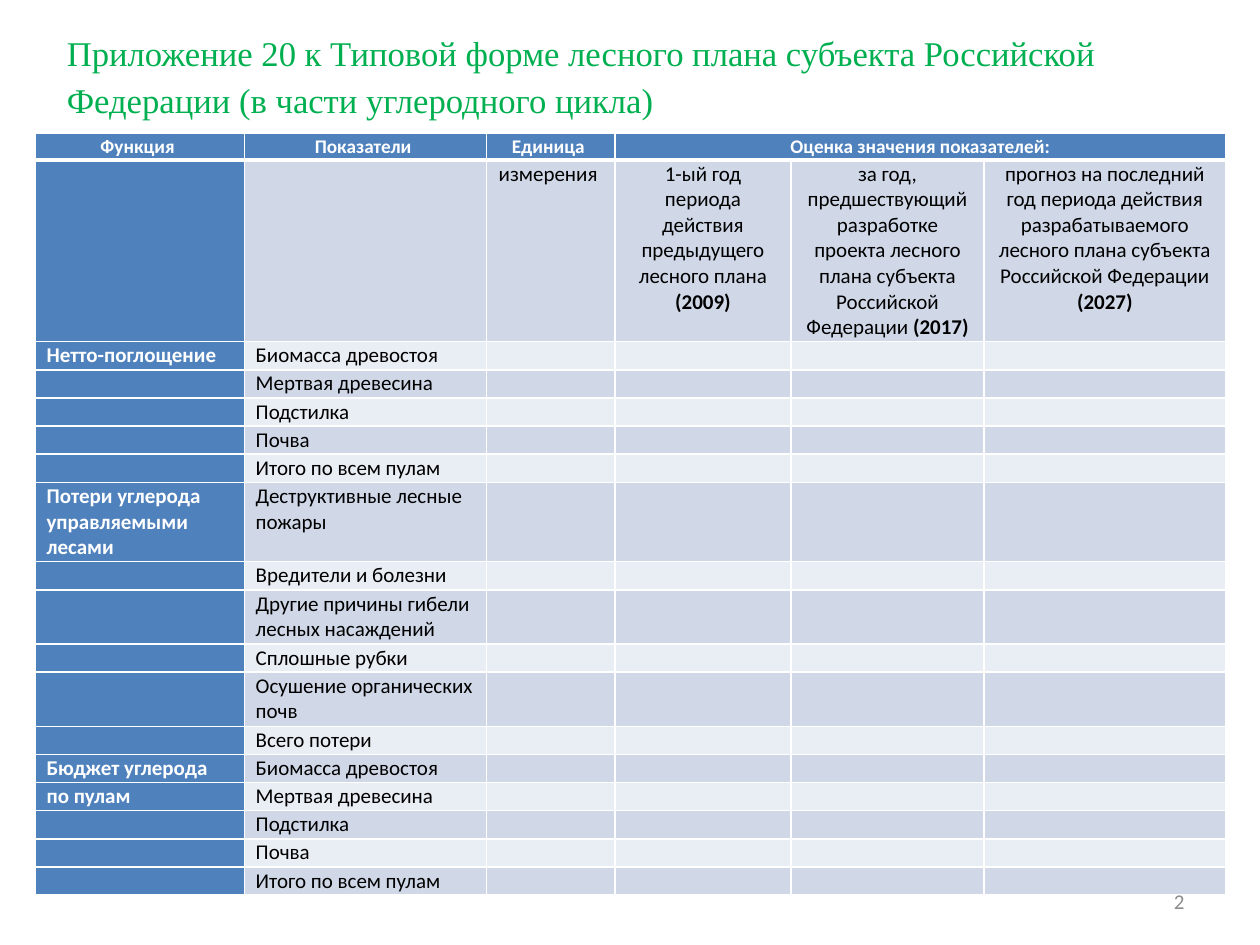
import dataclasses

import pptx
import pptx.dml.color
import pptx.enum.text
import pptx.oxml.ns
import pptx.util
from lxml import etree

ALIGN = pptx.enum.text.PP_ALIGN
MIDDLE = pptx.enum.text.MSO_ANCHOR.MIDDLE
qn = pptx.oxml.ns.qn


@dataclasses.dataclass(frozen=True)
class Theme:
    title: str = "00B050"
    accent: str = "4F81BD"
    bands: tuple = ("E9EDF4", "D0D8E8")
    light: str = "FFFFFF"
    dark: str = "000000"
    muted: str = "8C8C8C"
    title_font: str = "Times New Roman"
    body_font: str = "Calibri"
    title_size: float = 19.8
    head_size: float = 11
    body_size: float = 12


def rgb(value):
    return pptx.dml.color.RGBColor.from_string(value)


def write(p, text, font, size, color, bold=False, align=None):
    r = p.add_run()
    r.text = text
    r.font.name = font
    r.font.size = pptx.util.Pt(size)
    r.font.color.rgb = rgb(color)
    r.font.bold = bold
    if align is not None:
        p.alignment = align


class Deck:
    COLUMNS, ROWS = 100, 75

    def __init__(self, theme):
        self.theme = theme
        self.prs = pptx.Presentation()
        self.prs.slide_width = pptx.util.Inches(10)
        self.prs.slide_height = pptx.util.Inches(7.5)
        self.s = self.prs.slides.add_slide(self.prs.slide_layouts[5])

    def x(self, columns):
        return round(self.prs.slide_width * columns / self.COLUMNS)

    def y(self, rows):
        return round(self.prs.slide_height * rows / self.ROWS)

    def box(self, left, top, width, height):
        return self.x(left), self.y(top), self.x(width), self.y(height)

    def title(self, text, *place):
        sp = self.s.shapes.title
        sp.left, sp.top, sp.width, sp.height = self.box(*place)
        tf = sp.text_frame
        tf.word_wrap = True
        tf.auto_size = pptx.enum.text.MSO_AUTO_SIZE.NONE
        tf.vertical_anchor = MIDDLE
        tf.margin_top, tf.margin_bottom = 0, self.y(2.1)
        p = tf.paragraphs[0]
        p.line_spacing = 1.15
        write(p, text, self.theme.title_font, self.theme.title_size, self.theme.title, align=ALIGN.LEFT)

    def page_number(self, text, *place):
        tf = self.s.shapes.add_textbox(*self.box(*place)).text_frame
        tf.word_wrap = True
        tf.vertical_anchor = MIDDLE
        write(tf.paragraphs[0], text, self.theme.body_font, self.theme.body_size,
              self.theme.muted, align=ALIGN.RIGHT)

    def borders(self, cell, bottom):
        tcPr = cell._tc.get_or_add_tcPr()
        for i, side in enumerate(("lnL", "lnR", "lnT", "lnB")):
            width = pptx.util.Pt(bottom if side == "lnB" else 1)
            ln = etree.Element(qn("a:" + side), w=str(width))
            fill = etree.SubElement(ln, qn("a:solidFill"))
            etree.SubElement(fill, qn("a:srgbClr"), val=self.theme.light)
            tcPr.insert(i, ln)

    def cell(self, cell, parts, row, column):
        t = self.theme
        header, accent = row == 0, row == 0 or column == 0
        cell.fill.solid()
        cell.fill.fore_color.rgb = rgb(t.accent if accent else t.bands[row % 2])
        self.borders(cell, 3 if header else 1)
        cell.margin_left = cell.margin_right = self.x(0.9)
        cell.margin_top = cell.margin_bottom = self.y(0.1)
        size = t.head_size if header else t.body_size
        p = cell.text_frame.paragraphs[0]
        for i, part in enumerate(parts):
            write(p, part, t.body_font, size, t.light if accent else t.dark,
                  bold=accent or i == 1, align=ALIGN.CENTER if row < 2 else ALIGN.LEFT)
        if not parts:
            etree.SubElement(p._p, qn("a:endParaRPr"), sz=str(size * 100))

    def table(self, rows, left, top, widths, heights):
        place = self.box(left, top, sum(widths), sum(heights))
        table = self.s.shapes.add_table(len(rows), len(widths), *place).table
        for column, width in zip(table.columns, widths):
            column.width = self.x(width)
        for row, height in zip(table.rows, heights):
            row.height = self.y(height)
        for i, values in enumerate(rows):
            for j in range(len(widths)):
                self.cell(table.cell(i, j), values[j] if j < len(values) else (), i, j)
        return table


HEADER = [
    [("Функция ",), ("Показатели ",), ("Единица ",), ("Оценка значения показателей:",)],
    [(), (), ("измерения ",),
     ("1-ый год периода действия предыдущего лесного плана ", "(2009)"),
     ("за год, предшествующий разработке проекта лесного плана субъекта Российской Федерации ", "(2017)"),
     ("прогноз на последний год периода действия разрабатываемого лесного плана субъекта "
      "Российской Федерации ", "(2027)")],
]
POOLS = ["Биомасса древостоя", "Мертвая древесина", "Подстилка", "Почва", "Итого по всем пулам"]
LOSSES = ["Деструктивные лесные пожары", "Вредители и болезни", "Другие причины гибели лесных насаждений",
          "Сплошные рубки", "Осушение органических почв", "Всего потери"]
GROUPS = [
    (["Нетто-поглощение"], POOLS),
    (["Потери углерода управляемыми лесами"], LOSSES),
    (["Бюджет углерода", "по пулам"], POOLS),
]
ONE_LINE, TWO_LINES, THREE_LINES = 2.2, 4.3, 6.3
TALL_ROWS = {LOSSES[0]: THREE_LINES, LOSSES[2]: TWO_LINES, LOSSES[4]: TWO_LINES}


def main():
    deck = Deck(Theme())
    deck.title("Приложение 20 к Типовой форме лесного плана субъекта Российской Федерации "
               "(в части углеродного цикла)", 4.3, 2.9, 90, 7.9)
    rows, heights = list(HEADER), [2.1, 14.4]
    for labels, indicators in GROUPS:
        for i, indicator in enumerate(indicators):
            rows.append([tuple(labels[i:i + 1]), (indicator,)])
            heights.append(TALL_ROWS.get(indicator, ONE_LINE))
    table = deck.table(rows, 2.8, 10.6, [16.6, 19.2, 10.2, 14, 15.3, 19.2], heights)
    table.cell(0, 3).merge(table.cell(0, 5))
    deck.page_number("2", 71.7, 69.5, 23.3, 4)
    deck.prs.save("out.pptx")


if __name__ == "__main__":
    main()
